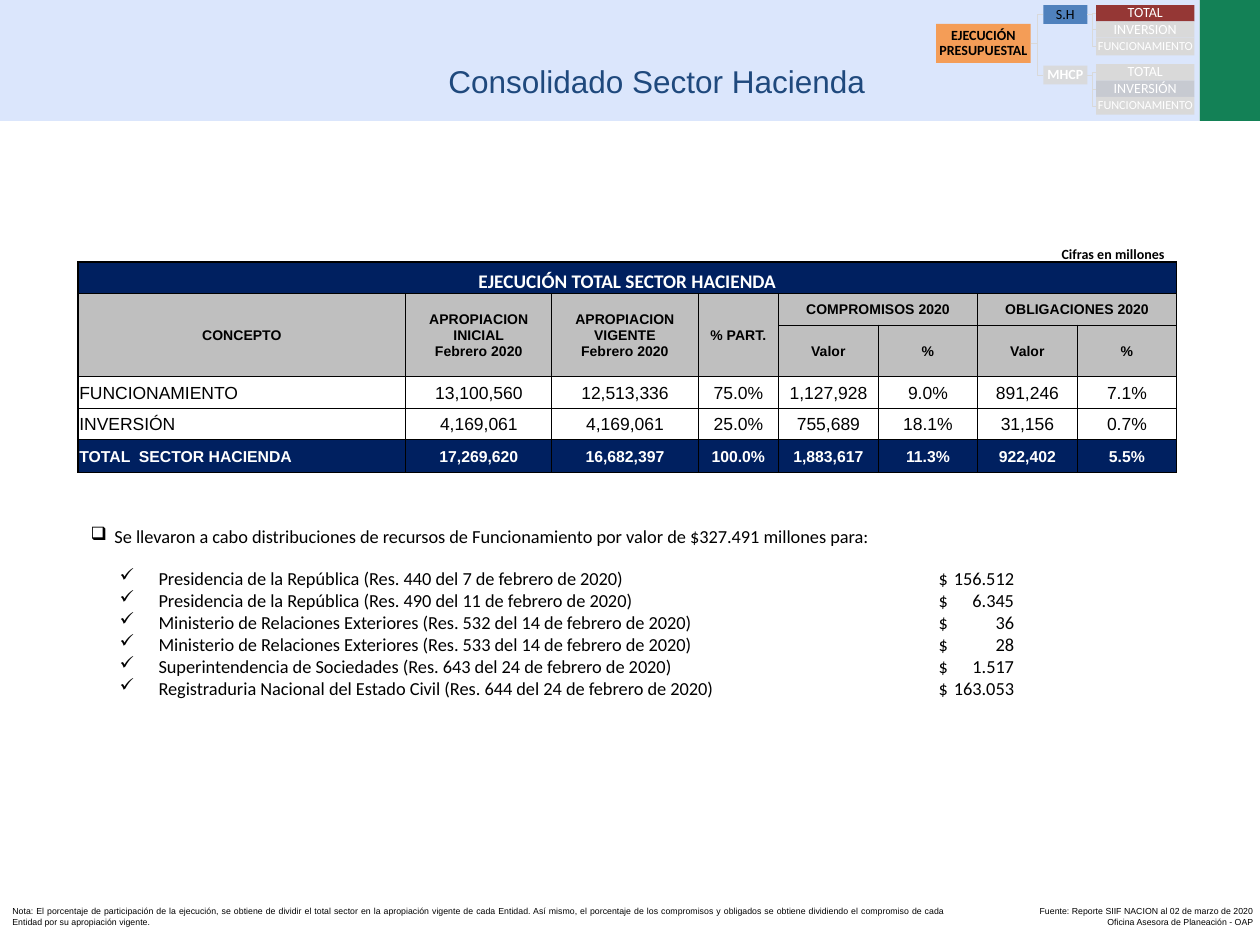
from dataclasses import dataclass

from lxml.etree import SubElement
from pptx import Presentation
from pptx.dml.color import RGBColor
from pptx.enum.shapes import MSO_CONNECTOR as Connector, MSO_SHAPE as Shape
from pptx.enum.text import MSO_ANCHOR as Anchor, PP_ALIGN as Align
from pptx.oxml.ns import qn
from pptx.util import Inches, Pt


@dataclass(frozen=True)
class Theme:
    sans: str = "Arial"
    body: str = "Calibri"
    black: str = "000000"
    white: str = "FFFFFF"
    band: str = "DBE6FC"
    green: str = "138156"
    title: str = "1F497D"
    navy: str = "002060"
    header: str = "BFBFBF"
    muted: str = "D9D9D9"
    orange: str = "F79646"
    blue: str = "4F81BD"
    red: str = "953735"
    title_size: float = 18
    table_title_size: float = 11
    list_size: float = 10.5
    cell_size: float = 10
    total_size: float = 9
    small_size: float = 8
    tiny_size: float = 7
    note_size: float = 5


THEME = Theme()


def rgb(value):
    return RGBColor.from_string(value)


def write(frame, text, *, size, font=THEME.body, color=THEME.black, bold=False,
          align=Align.LEFT, spacing=None, bullet=None, indent=0, tabs=()):
    """Fill a text frame, one paragraph per line of text."""
    for index, line in enumerate(text.split("\n")):
        para = frame.paragraphs[0] if index == 0 else frame.add_paragraph()
        para.alignment = align
        if spacing:
            para.line_spacing = spacing
        properties = para._p.get_or_add_pPr()
        if bullet:
            properties.set("marL", str(Inches(indent)))
            properties.set("indent", str(-Inches(indent)))
            SubElement(properties, qn("a:buChar"), char=bullet)
        if tabs:
            stops = SubElement(properties, qn("a:tabLst"))
            for position, kind in tabs:
                SubElement(stops, qn("a:tab"), pos=str(Inches(position)), algn=kind)
        span = para.add_run()
        span.text = line
        span.font.name, span.font.size, span.font.bold = font, Pt(size), bold
        span.font.color.rgb = rgb(color)


def set_borders(cell, **widths):
    properties = cell._tc.get_or_add_tcPr()
    for side in "LRTB":
        line = SubElement(properties, qn(f"a:ln{side}"), w=str(Pt(widths.get(side, 0.5))))
        fill = SubElement(line, qn("a:solidFill"))
        SubElement(fill, qn("a:srgbClr"), val=THEME.black)


class SlideBuilder:
    def __init__(self, page, theme):
        self.page, self.theme = page, theme

    def rectangle(self, left, top, width, height, fill, alpha=100):
        box = self.page.shapes.add_shape(
            Shape.RECTANGLE, Inches(left), Inches(top), Inches(width), Inches(height))
        box.shadow.inherit = False
        box.line.fill.background()
        box.fill.solid()
        box.fill.fore_color.rgb = rgb(fill)
        if alpha < 100:
            color = box._element.spPr.find(qn("a:solidFill"))[0]
            SubElement(color, qn("a:alpha"), val=str(alpha * 1000))
        return box

    def node(self, text, left, top, width, height, fill, alpha=100, **style):
        box = self.rectangle(left, top, width, height, fill, alpha)
        frame = box.text_frame
        frame.word_wrap = True
        frame.vertical_anchor = Anchor.MIDDLE
        frame.margin_left = frame.margin_right = Inches(0.01)
        frame.margin_top = frame.margin_bottom = Inches(0.01)
        style = {"size": self.theme.small_size, "align": Align.CENTER, "spacing": 0.9} | style
        write(frame, text, **style)
        return box

    def branch(self, parent, child):
        line = self.page.shapes.add_connector(Connector.ELBOW, 0, 0, 0, 0)
        line.begin_connect(parent, 3)
        line.end_connect(child, 1)
        line.line.color.rgb = rgb(self.theme.muted)
        line.line.width = Pt(0.25)
        SubElement(line._element.spPr, qn("a:effectLst"))

    def text(self, text, left, top, width, height, anchor=Anchor.TOP, **style):
        box = self.page.shapes.add_textbox(
            Inches(left), Inches(top), Inches(width), Inches(height))
        box.text_frame.word_wrap = True
        box.text_frame.vertical_anchor = anchor
        write(box.text_frame, text, **style)

    def table(self, rows, left, top, widths, heights, merges, row_styles):
        frame = self.page.shapes.add_table(
            len(rows), len(widths), Inches(left), Inches(top),
            Inches(sum(widths)), Inches(sum(heights)))
        table = frame.table
        table.first_row = table.horz_banding = False
        for column, width in zip(table.columns, widths):
            column.width = Inches(width)
        for row, height in zip(table.rows, heights):
            row.height = Inches(height)
        last_row, last_column = len(rows) - 1, len(widths) - 1
        for r, (values, (fill, style)) in enumerate(zip(rows, row_styles)):
            for c, value in enumerate(values):
                cell = table.cell(r, c)
                cell.margin_left = cell.margin_right = cell.margin_top = Inches(0.01)
                cell.margin_bottom = 0
                cell.vertical_anchor = Anchor.MIDDLE if r else Anchor.BOTTOM
                set_borders(cell, L=0.5 if c else 1, R=1 if c == last_column else 0.5,
                            T=0.5 if r else 1, B=1 if r == last_row else 0.5)
                if fill:
                    cell.fill.solid()
                    cell.fill.fore_color.rgb = rgb(fill)
                else:
                    cell.fill.background()
                if value:
                    align = Align.LEFT if c == 0 and r > 2 else Align.CENTER
                    write(cell.text_frame, value, align=align, **style)
        for r, c, end_row, end_column in merges:
            table.cell(r, c).merge(table.cell(end_row, end_column))


def add_navigation(slide):
    t = slide.theme
    root = slide.node("EJECUCIÓN PRESUPUESTAL", 7.43, 0.19, 0.75, 0.31, t.orange, 90, bold=True)
    sector = slide.node("S.H", 8.28, 0.04, 0.35, 0.15, t.blue)
    ministry = slide.node("MHCP", 8.28, 0.52, 0.35, 0.15, t.muted, 90,
                          color=t.white, bold=True)
    groups = [
        (sector, 0.04, [("TOTAL", t.red, 100), ("INVERSION", t.muted, 100)]),
        (ministry, 0.51, [("TOTAL", t.muted, 100), ("INVERSIÓN", t.header, 70)]),
    ]
    for parent, top, leaves in groups:
        slide.branch(root, parent)
        for index, (label, fill, alpha) in enumerate(leaves):
            leaf = slide.node(label, 8.7, top + 0.13 * index, 0.78, 0.13, fill, alpha,
                              color=t.white)
            slide.branch(parent, leaf)
        leaf = slide.node("FUNCIONAMIENTO", 8.7, top + 0.26, 0.78, 0.14, t.muted,
                          color=t.white, size=t.tiny_size)
        slide.branch(parent, leaf)


def add_budget_table(slide):
    t = slide.theme
    blank = [""]
    rows = [
        ["EJECUCIÓN TOTAL SECTOR HACIENDA"] + blank * 7,
        ["CONCEPTO", "APROPIACION INICIAL\nFebrero 2020", "APROPIACION VIGENTE\nFebrero 2020",
         "% PART.", "COMPROMISOS 2020", "", "OBLIGACIONES 2020", ""],
        blank * 4 + ["Valor", "%"] * 2,
        ["FUNCIONAMIENTO", "13,100,560", "12,513,336", "75.0%",
         "1,127,928", "9.0%", "891,246", "7.1%"],
        ["INVERSIÓN", "4,169,061", "4,169,061", "25.0%", "755,689", "18.1%", "31,156", "0.7%"],
        ["TOTAL  SECTOR HACIENDA", "17,269,620", "16,682,397", "100.0%",
         "1,883,617", "11.3%", "922,402", "5.5%"],
    ]
    heading = (t.header, dict(size=t.small_size, font=t.sans, bold=True))
    figures = (None, dict(size=t.cell_size, font=t.sans))
    styles = [
        (t.navy, dict(size=t.table_title_size, color=t.white, bold=True)),
        heading, heading, figures, figures,
        (t.navy, dict(size=t.total_size, font=t.sans, color=t.white, bold=True)),
    ]
    merges = [(0, 0, 0, 7), (1, 4, 1, 5), (1, 6, 1, 7)] + [(1, c, 2, c) for c in range(4)]
    slide.table(rows, 0.62, 2.08, [2.6, 1.16, 1.16, 0.64] + [0.79] * 4,
                [0.25, 0.25, 0.41, 0.25, 0.25, 0.26], merges, styles)


def add_distributions(slide):
    size = slide.theme.list_size
    slide.text("Se llevaron a cabo distribuciones de recursos de Funcionamiento "
               "por valor de $327.491 millones para:", 0.62, 4.12, 9.38, 0.28,
               size=size, align=Align.JUSTIFY, bullet="❑", indent=0.19)
    distributions = [
        ("Presidencia de la República (Res. 440 del 7 de febrero de 2020)", "156.512"),
        ("Presidencia de la República (Res. 490 del 11 de febrero de 2020)", "6.345"),
        ("Ministerio de Relaciones Exteriores (Res. 532 del 14 de febrero de 2020)", "36"),
        ("Ministerio de Relaciones Exteriores (Res. 533 del 14 de febrero de 2020)", "28"),
        ("Superintendencia de Sociedades (Res. 643 del 24 de febrero de 2020)", "1.517"),
        ("Registraduria Nacional del Estado Civil (Res. 644 del 24 de febrero de 2020)",
         "163.053"),
    ]
    slide.text("\n".join(f"{entity}\t$\t{amount}" for entity, amount in distributions),
               0.85, 4.45, 8.78, 1.16, size=size, align=Align.JUSTIFY,
               bullet="✓", indent=0.31, tabs=[(6.5, "l"), (7.1, "r")])


def main():
    deck = Presentation()
    deck.slide_width, deck.slide_height = Inches(10), Inches(7.5)
    slide = SlideBuilder(deck.slides.add_slide(deck.slide_layouts[6]), THEME)
    t = slide.theme
    slide.rectangle(9.52, 0, 0.48, 0.96, t.green)
    slide.rectangle(0, 0, 9.52, 0.96, t.band)
    slide.text("Consolidado Sector Hacienda", 3.46, 0.44, 4.39, 0.4,
               size=t.title_size, font=t.sans, color=t.title)
    add_navigation(slide)
    slide.text("Cifras en millones", 7.85, 1.78, 1.97, 0.33, anchor=Anchor.MIDDLE,
               size=t.small_size, bold=True, align=Align.CENTER, spacing=Pt(20))
    add_budget_table(slide)
    add_distributions(slide)
    slide.text("Nota: El porcentaje de participación de la ejecución, se obtiene de dividir "
               "el total sector en la apropiación vigente de cada Entidad. Así mismo, el "
               "porcentaje de los compromisos y obligados se obtiene dividiendo el compromiso "
               "de cada Entidad por su apropiación vigente.", 0, 7.14, 7.62, 0.27,
               size=t.note_size, font=t.sans, align=Align.JUSTIFY)
    slide.text("Fuente: Reporte SIIF NACION al 02 de marzo de 2020\n"
               "Oficina Asesora de Planeación - OAP", 6.52, 7.14, 3.53, 0.27,
               size=t.note_size, font=t.sans, align=Align.RIGHT)
    deck.save("out.pptx")


if __name__ == "__main__":
    main()
